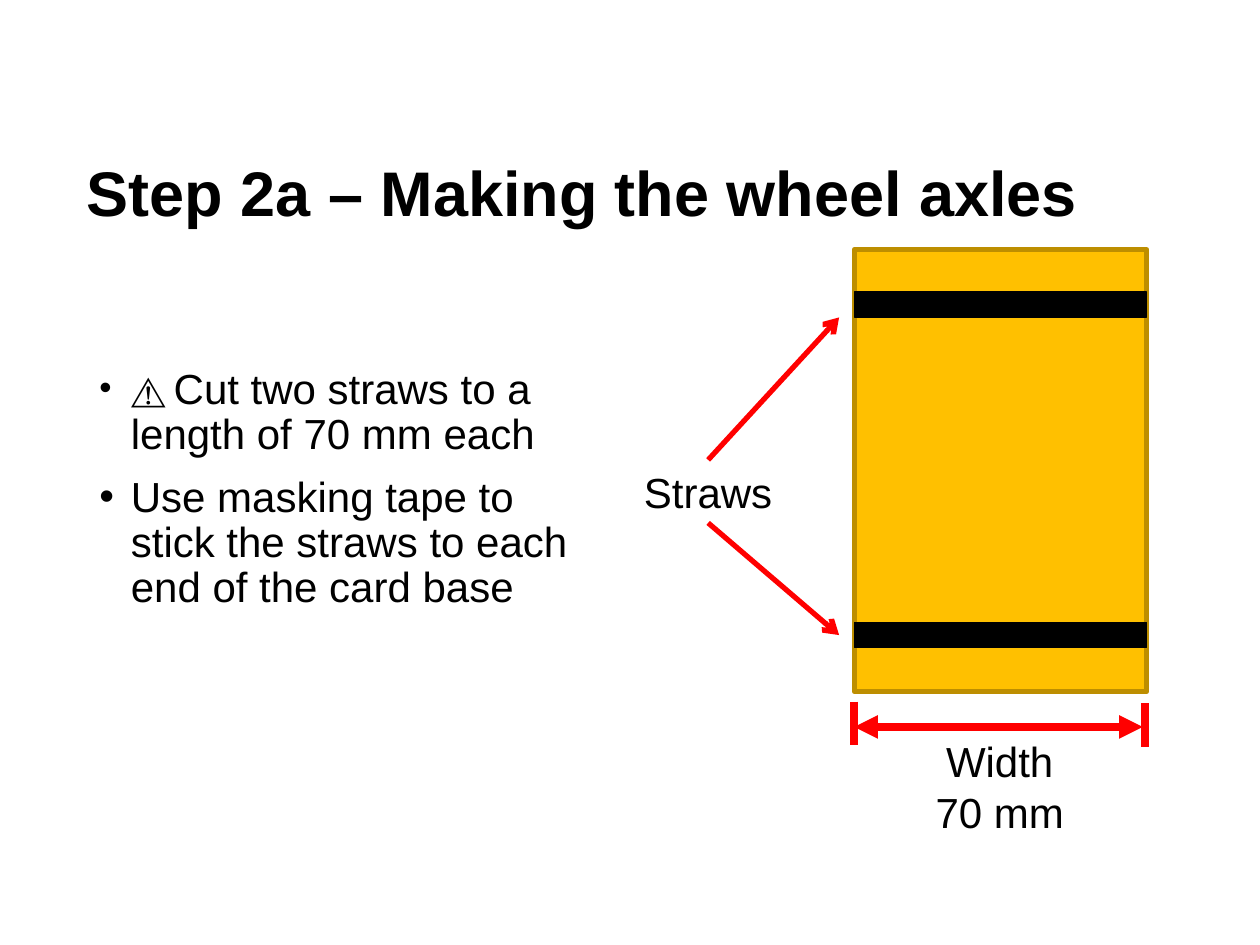
"""Build the slide on making the wheel axles."""
import pptx
import pptx.dml.color
import pptx.enum.shapes
import pptx.enum.text
import pptx.oxml
import pptx.oxml.ns
import pptx.util
from lxml import etree

Pt = pptx.util.Pt
RGB = pptx.dml.color.RGBColor
ALIGN = pptx.enum.text.PP_ALIGN
ANCHOR = pptx.enum.text.MSO_ANCHOR
BLACK = RGB(0x00, 0x00, 0x00)
RED = RGB(0xFF, 0x00, 0x00)
GOLD = RGB(0xFF, 0xC0, 0x00)
BROWN = RGB(0xBD, 0x8E, 0x00)


class Deck:
    """Holds the text style and the current slide."""

    def __init__(self, slide):
        self.slide = slide
        self.style = {"name": "Arial", "size": Pt(24), "bold": False}

    def node(self, parent, tag, **attrs):
        """Append a drawing element to its parent."""
        return etree.SubElement(parent, pptx.oxml.ns.qn(tag), attrs)

    def text(self, box, paras, align=ALIGN.LEFT, anchor=ANCHOR.TOP,
             space=1.0, gap=0, bullet=None, **extra):
        """Add a text box; each paragraph is a list of (text, size) runs."""
        shape = self.slide.shapes.add_textbox(*map(Pt, box))
        frame = shape.text_frame
        frame.word_wrap = True
        frame.vertical_anchor = anchor
        for i, runs in enumerate(paras):
            para = frame.paragraphs[0] if i == 0 else frame.add_paragraph()
            para.alignment = align
            para.line_spacing = space
            if i and gap:
                para.space_before = Pt(gap)
            if bullet:
                props = para._p.get_or_add_pPr()
                props.set("marL", str(Pt(18)))
                props.set("indent", str(-Pt(18)))
                self.node(props, "a:buFont", typeface="Arial")
                self.node(props, "a:buChar", char=bullet)
            for words, size in runs:
                run = para.add_run()
                run.text = words
                look = {**self.style, "size": Pt(size), **extra}
                for key, value in look.items():
                    setattr(run.font, key, value)
                run.font.color.rgb = BLACK
        return shape

    def rect(self, box, fill, edge, width):
        """Add a filled rectangle."""
        kind = pptx.enum.shapes.MSO_SHAPE.RECTANGLE
        shape = self.slide.shapes.add_shape(kind, *map(Pt, box))
        shape.shadow.inherit = False
        shape.fill.solid()
        shape.fill.fore_color.rgb = fill
        shape.line.color.rgb = edge
        shape.line.width = Pt(width)

    def line(self, start, end, width, ends=None, join=None):
        """Add a red line with optional arrowheads and a joined start."""
        kind = pptx.enum.shapes.MSO_CONNECTOR.STRAIGHT
        line = self.slide.shapes.add_connector(kind, *map(Pt, start + end))
        if join:
            line.begin_connect(*join)
        line.line.color.rgb = RED
        line.line.width = Pt(width)
        for tag, tip in (ends or {}).items():
            self.node(line.line._get_or_add_ln(), tag, type=tip)
        self.node(line._element.spPr, "a:effectLst")


def main():
    """Draw the slide and save it."""
    prs = pptx.Presentation()
    prs.slide_width, prs.slide_height = Pt(720), Pt(540)
    deck = Deck(prs.slides.add_slide(prs.slide_layouts[6]))

    deck.text((42.5, 81.4, 627.8, 61.2),
              [[("Step 2a – Making the wheel axles", 36)]],
              anchor=ANCHOR.MIDDLE, space=0.9, bold=True)
    deck.text((49.7, 206.6, 284.4, 223.9),
              [[("⚠", 20), (" ", 16),
                ("Cut two straws to a length of 70 mm each", 24)],
               [("Use masking tape to stick the straws to each end "
                 "of the card base", 24)]],
              space=0.9, gap=10, bullet="•")

    left, wide = 488.2, 167
    deck.rect((left, 142.6, wide, 252.7), GOLD, BROWN, 3)
    for top in (167, 355.7):
        deck.rect((left, top, wide, 14.4), BLACK, BLACK, 1)

    for x, top in ((left, 401), (654.5, 402)):
        deck.line((x, top), (x, top + 24.8), 4.5)
    deck.line((653, 415.4), (left, 415.4), 4.5,
              {"a:headEnd": "triangle", "a:tailEnd": "triangle"})
    deck.text((521.3, 416.9, 100, 65.5),
              [[("Width", 24)], [("70 mm", 24)]], ALIGN.CENTER)

    label = deck.text((360, 262.8, 89.3, 36), [[("Straws", 24)]],
                      ALIGN.CENTER)
    for site, start, end in ((0, 262.8, 181.4), (2, 298.8, 362.9)):
        deck.line((404.65, start), (479.5, end), 3,
                  {"a:tailEnd": "arrow"}, (label, site))

    prs.save("out.pptx")


if __name__ == "__main__":
    main()
